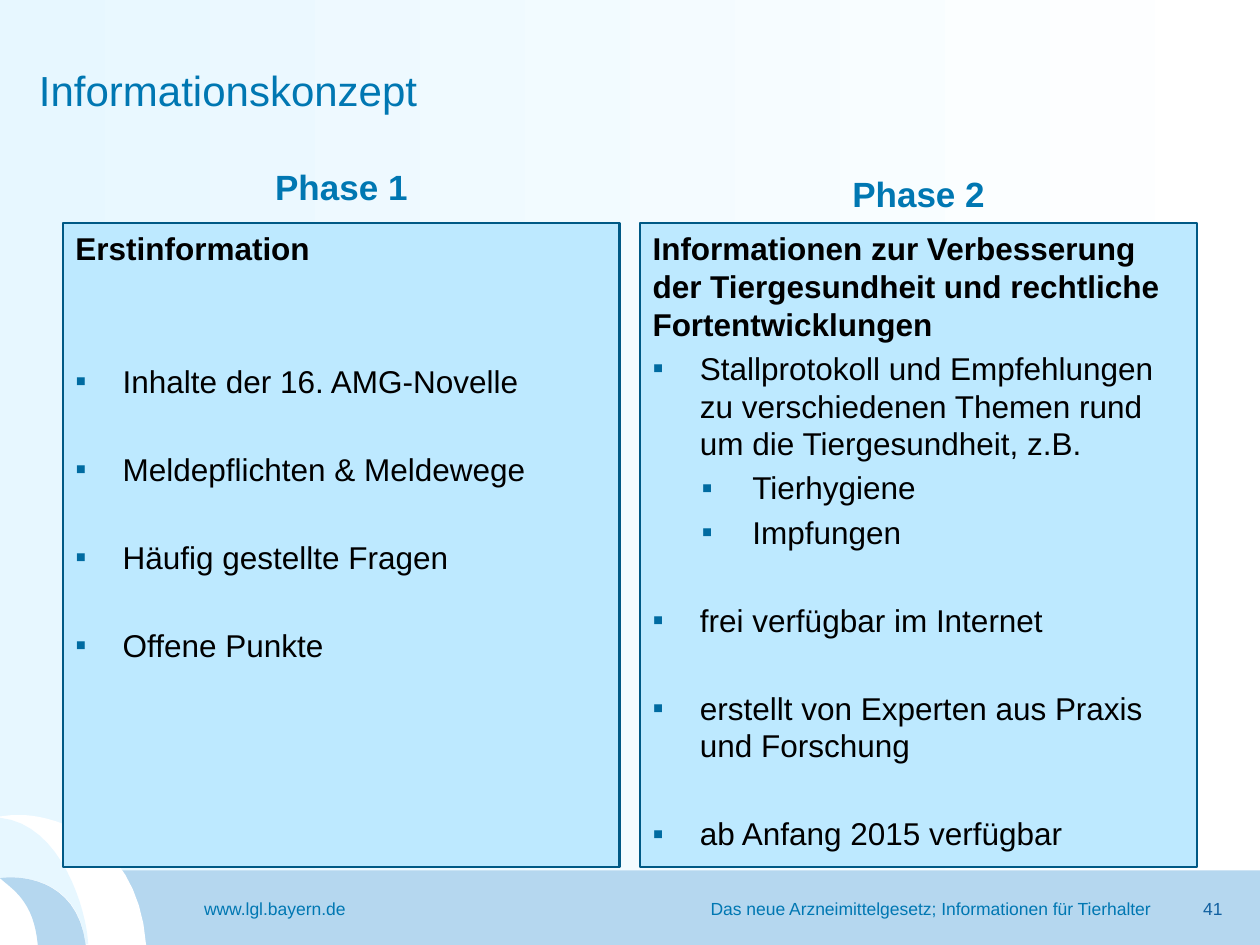
"""Build the slide "Informationskonzept" with two phase panels."""
from lxml import etree
from pptx import Presentation
from pptx.dml.color import RGBColor
from pptx.enum.shapes import MSO_SHAPE
from pptx.enum.text import MSO_ANCHOR, PP_ALIGN
from pptx.oxml.ns import qn
from pptx.util import Pt

RECTANGLE = MSO_SHAPE.RECTANGLE
TOP = MSO_ANCHOR.TOP
LEFT, CENTER, RIGHT = PP_ALIGN.LEFT, PP_ALIGN.CENTER, PP_ALIGN.RIGHT
BLUE, PALE, BAND, WHITE = "0077B2", "E7F7FF", "B5D7EF", "FFFFFF"
CURVE_STEPS = 16


def color(hex_value):
    return RGBColor.from_string(hex_value)


def write(paragraph, text, size, hex_value, bold=False):
    run = paragraph.add_run()
    run.text = text
    run.font.name = "Arial"
    run.font.size = Pt(size)
    run.font.bold = bold
    run.font.color.rgb = color(hex_value)


prs = Presentation()
prs.slide_width, prs.slide_height = Pt(720), Pt(540)
slide = prs.slides.add_slide(prs.slide_layouts[6])
shapes = slide.shapes

backdrop = shapes.add_shape(RECTANGLE, 0, 0, Pt(720), Pt(540))
backdrop.fill.gradient()
backdrop.fill.gradient_angle = 0
for stop, hex_value, position in zip(backdrop.fill.gradient_stops, (PALE, WHITE), (0, 1)):
    stop.color.rgb = color(hex_value)
    stop.position = position

footer_band = shapes.add_shape(RECTANGLE, Pt(62.6), Pt(497.4), Pt(657.4), Pt(42.6))
footer_band.fill.solid()
footer_band.fill.fore_color.rgb = color(BAND)

for decoration in (backdrop, footer_band):
    decoration.line.fill.background()
    decoration.shadow.inherit = False

arcs = [
    (WHITE, (0, 466.6), [(7, 465.8, 5, 465.8, 13, 465.8),
                         (21.6, 465.8, 78.5, 472.3, 83.5, 540), (0, 540)]),
    (PALE, (0, 467.3), [(35.3, 470.9, 49.7, 520.6, 50.4, 539.5), (0, 539.5)]),
    (WHITE, (0, 501.8), [(8.6, 500.4, 44.6, 499.7, 49, 540), (0, 540)]),
    (BAND, (0, 501.8), [(7.9, 500.4, 43.9, 499.7, 49, 540), (21.6, 540),
                        (19.4, 514.8, 7.2, 508.3, 0, 501.8)]),
]
for hex_value, start, segments in arcs:
    outline = shapes.build_freeform(Pt(start[0]), Pt(start[1]))
    x, y = start
    for segment in segments:
        if len(segment) == 2:
            points = [segment]
        else:
            x1, y1, x2, y2, x3, y3 = segment
            points = []
            for step in range(1, CURVE_STEPS + 1):
                t = step / CURVE_STEPS
                u = 1 - t
                weights = (u**3, 3 * u * u * t, 3 * u * t * t, t**3)
                points.append((sum(w * p for w, p in zip(weights, (x, x1, x2, x3))),
                               sum(w * p for w, p in zip(weights, (y, y1, y2, y3)))))
        outline.add_line_segments([(Pt(px), Pt(py)) for px, py in points], close=False)
        x, y = points[-1]
    outline.add_line_segments([], close=True)
    arc = outline.convert_to_shape()
    arc.fill.solid()
    arc.fill.fore_color.rgb = color(hex_value)
    arc.line.fill.background()
    arc.shadow.inherit = False

labels = [
    ("Informationskonzept", 22.3, 37.1, 664, 32, LEFT, 24, BLUE, False),
    ("www.lgl.bayern.de", 116.3, 513.4, 81.4, 12.2, CENTER, 10, BLUE, False),
    ("Das neue Arzneimittelgesetz; Informationen für Tierhalter",
     247.7, 513.4, 409.7, 16.6, RIGHT, 10, BLUE, False),
    ("41", 655.4, 513.4, 43.2, 12.2, RIGHT, 10, "1160A0", False),
    ("Phase 1", 36, 94.7, 318.2, 28, CENTER, 20, BLUE, True),
    ("Phase 2", 365.8, 98.3, 318.2, 28, CENTER, 20, BLUE, True),
]
for text, left, top, width, height, alignment, size, hex_value, bold in labels:
    frame = shapes.add_textbox(Pt(left), Pt(top), Pt(width), Pt(height)).text_frame
    frame.word_wrap = True
    frame.margin_left = frame.margin_right = frame.margin_top = frame.margin_bottom = 0
    frame.paragraphs[0].alignment = alignment
    write(frame.paragraphs[0], text, size, hex_value, bold)

TIGHT, WIDE, WIDEST = 3.6, 28.7, 54.3
ITEM, SUBITEM = (27, -27), (57, -29)
phases = [
    (36, "Erstinformation", [
        ("Inhalte der 16. AMG-Novelle", ITEM, WIDEST),
        ("Meldepflichten & Meldewege", ITEM, WIDE),
        ("Häufig gestellte Fragen", ITEM, WIDE),
        ("Offene Punkte", ITEM, WIDE),
    ]),
    (365.8, "Informationen zur Verbesserung der Tiergesundheit und rechtliche "
            "Fortentwicklungen", [
        ("Stallprotokoll und Empfehlungen zu verschiedenen Themen rund um die "
         "Tiergesundheit, z.B.", ITEM, TIGHT),
        ("Tierhygiene", SUBITEM, TIGHT),
        ("Impfungen", SUBITEM, TIGHT),
        ("frei verfügbar im Internet", ITEM, WIDE),
        ("erstellt von Experten aus Praxis und Forschung", ITEM, WIDE),
        ("ab Anfang 2015 verfügbar", ITEM, WIDE),
    ]),
]
for left, heading, items in phases:
    panel = shapes.add_shape(RECTANGLE, Pt(left), Pt(127.4), Pt(318.2), Pt(368))
    panel.shadow.inherit = False
    panel.fill.solid()
    panel.fill.fore_color.rgb = color("BDE9FF")
    panel.line.color.rgb = color("005985")
    panel.line.width = Pt(1.5)
    frame = panel.text_frame
    frame.word_wrap = True
    frame.vertical_anchor = TOP
    write(frame.paragraphs[0], heading, 18, "000000", True)
    for text, (margin, indent), gap in items:
        entry = frame.add_paragraph()
        properties = entry._p.get_or_add_pPr()
        properties.set("marL", str(Pt(margin)))
        properties.set("indent", str(Pt(indent)))
        bullet_color = etree.SubElement(properties, qn("a:buClr"))
        etree.SubElement(bullet_color, qn("a:srgbClr"), val="006BA1")
        etree.SubElement(properties, qn("a:buFont"), typeface="Arial")
        etree.SubElement(properties, qn("a:buChar"), char="▪")
        entry.space_before = Pt(gap)
        write(entry, text, 18, "000000")
    for paragraph in frame.paragraphs:
        paragraph.alignment = LEFT

prs.save("out.pptx")
